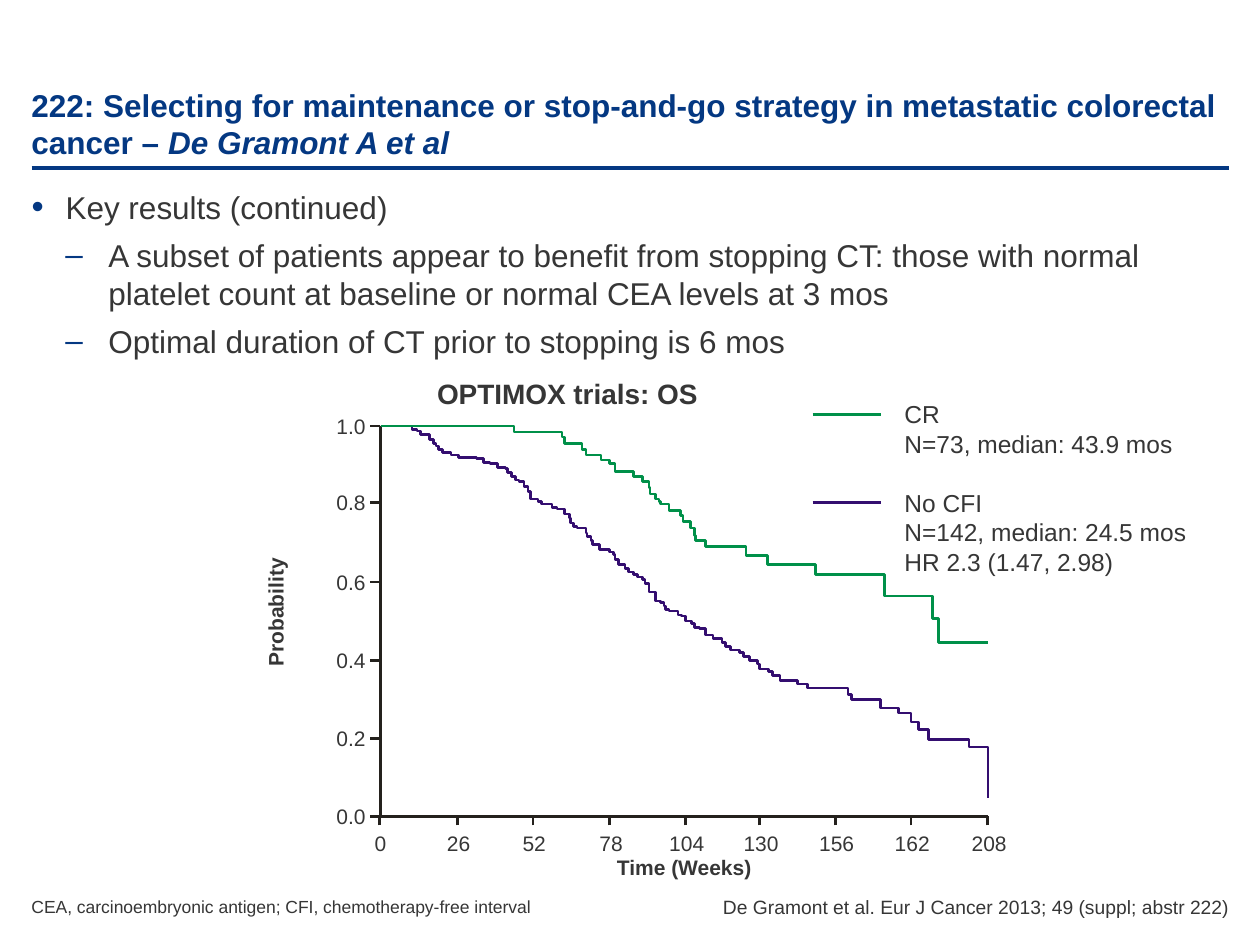
"""Build the maintenance versus stop-and-go survival slide."""
from lxml import etree
from pptx import Presentation
from pptx import util as u
from pptx.dml.color import RGBColor
from pptx.enum import shapes, text
from pptx.oxml import ns

SCALE = 9144
FONT = "Arial"
COLORS = {"navy": "043882", "text": "363636", "axis": "24211D",
          "no_cfi": "340E70", "cr": "009049"}
LEFT, CENTER, RIGHT = text.PP_ALIGN.LEFT, text.PP_ALIGN.CENTER, text.PP_ALIGN.RIGHT
TOP, BOTTOM = text.MSO_ANCHOR.TOP, text.MSO_ANCHOR.BOTTOM
ORIGIN_X, END_X, TOP_Y, BASE_Y = 302, 784, 338, 648
PROBABILITY_TICKS = {"1.0": 338, "0.8": 399, "0.6": 462,
                     "0.4": 524, "0.2": 586, "0.0": 648}
WEEK_TICKS = {"0": 301, "26": 363, "52": 423, "78": 484, "104": 544,
              "130": 603, "156": 663, "162": 723, "208": 784}
CR_DROPS = [
    (408, 343), (446, 347), (448, 352), (462, 357), (465, 361), (477, 365),
    (484, 368), (488, 374), (503, 378), (510, 382), (515, 387), (516, 392),
    (520, 396), (523, 398), (524, 400), (531, 405), (540, 409), (542, 414),
    (548, 419), (551, 425), (552, 429), (560, 434), (592, 441), (609, 448),
    (647, 456), (702, 473), (740, 491), (745, 510), (784, 510)]
NO_CFI_DROPS = [
    (327, 341), (331, 342), (334, 345), (341, 349), (344, 352), (346, 354),
    (348, 357), (351, 359), (358, 361), (364, 363), (378, 364), (384, 367),
    (389, 368), (395, 371), (401, 372), (403, 375), (406, 378), (409, 381),
    (412, 382), (416, 386), (419, 390), (421, 396), (427, 398), (430, 400),
    (438, 403), (442, 404), (448, 408), (452, 411), (453, 415), (455, 418),
    (458, 419), (465, 423), (466, 426), (469, 429), (470, 432), (476, 436),
    (484, 438), (487, 440), (488, 444), (491, 448), (496, 451), (499, 454),
    (503, 456), (506, 458), (510, 460), (512, 463), (515, 470), (520, 477),
    (524, 478), (527, 481), (528, 484), (531, 485), (538, 488), (541, 489),
    (544, 493), (549, 495), (551, 498), (555, 499), (560, 504), (566, 507),
    (573, 510), (576, 513), (580, 516), (587, 518), (590, 521), (595, 524),
    (601, 527), (603, 531), (610, 533), (613, 536), (619, 540), (633, 543),
    (641, 546), (673, 551), (676, 555), (699, 562), (713, 566), (723, 573),
    (729, 579), (737, 587), (769, 593), (784, 633)]


def px(value):
    return u.Emu(value * SCALE)


def add_run(paragraph, words, size, color="text", bold=False, italic=False):
    run = paragraph.add_run()
    run.text = words
    font = run.font
    font.name, font.size, font.bold, font.italic = FONT, u.Pt(size), bold, italic
    font.color.rgb = RGBColor.from_string(COLORS[color])


def add_frame(slide, box, insets=(10, 5, 10, 5), anchor=TOP, wrap=False):
    shape = slide.shapes.add_textbox(*map(px, box))
    frame = shape.text_frame
    frame.word_wrap, frame.vertical_anchor = wrap, anchor
    if not wrap:
        frame.auto_size = text.MSO_AUTO_SIZE.SHAPE_TO_FIT_TEXT
    (frame.margin_left, frame.margin_top,
     frame.margin_right, frame.margin_bottom) = map(px, insets)
    return shape


def add_label(slide, box, words, size=12, align=LEFT, bold=False, **frame_options):
    shape = add_frame(slide, box, **frame_options)
    paragraph = shape.text_frame.paragraphs[0]
    paragraph.alignment = align
    add_run(paragraph, words, size, bold=bold)
    return shape


def add_paragraphs(frame, count):
    return [frame.paragraphs[0]] + [frame.add_paragraph() for _ in range(count - 1)]


def set_bullet(paragraph, character, margin, hanging, percent):
    properties = paragraph._p.get_or_add_pPr()
    properties.set("marL", str(px(margin)))
    properties.set("indent", str(px(-hanging)))
    color = etree.SubElement(properties, ns.qn("a:buClr"))
    etree.SubElement(color, ns.qn("a:srgbClr"), val=COLORS["navy"])
    etree.SubElement(properties, ns.qn("a:buSzPct"), val=str(percent * 1000))
    etree.SubElement(properties, ns.qn("a:buFont"), typeface=FONT)
    etree.SubElement(properties, ns.qn("a:buChar"), char=character)


def add_line(slide, start, end, color, width=1.5):
    line = slide.shapes.add_connector(
        shapes.MSO_CONNECTOR.STRAIGHT, *map(px, start + end))
    line.line.color.rgb = RGBColor.from_string(COLORS[color])
    line.line.width = u.Pt(width)
    etree.SubElement(line._element.spPr, ns.qn("a:effectLst"))


def add_polyline(slide, points, color):
    builder = slide.shapes.build_freeform(*points[0], scale=SCALE)
    builder.add_line_segments(points[1:], close=False)
    shape = builder.convert_to_shape()
    shape.shadow.inherit = False
    shape.fill.background()
    shape.line.color.rgb = RGBColor.from_string(COLORS[color])
    shape.line.width = u.Pt(1.5)


def add_survival_curve(slide, drops, color):
    points = [(ORIGIN_X, TOP_Y)]
    for x, y in drops:
        points += [(x, points[-1][1]), (x, y)]
    add_polyline(slide, points, color)


def add_title(slide):
    add_line(slide, (25, 133), (975, 133), "navy", 2.25)
    shape = add_frame(slide, (25, 25, 950, 103), (0, 5, 0, 0), BOTTOM, wrap=True)
    paragraph = shape.text_frame.paragraphs[0]
    add_run(paragraph, "222: Selecting for maintenance or stop-and-go strategy in "
            "metastatic colorectal cancer – ", 18, "navy", bold=True)
    add_run(paragraph, "De Gramont A et al", 18, "navy", bold=True, italic=True)


def add_key_results(slide):
    items = [
        ("•", 27, 27, 110, "Key results (continued)"),
        ("–", 61, 34, 100, "A subset of patients appear to benefit from stopping CT: "
         "those with normal platelet count at baseline or normal CEA levels at 3 mos"),
        ("–", 61, 34, 100, "Optimal duration of CT prior to stopping is 6 mos")]
    frame = add_frame(slide, (25, 144, 958, 581), (0, 5, 0, 5), wrap=True).text_frame
    paragraphs = add_paragraphs(frame, len(items))
    for level, (paragraph, (*bullet, words)) in enumerate(zip(paragraphs, items)):
        paragraph.level = min(level, 1)
        paragraph.space_after = u.Pt(6)
        set_bullet(paragraph, *bullet)
        add_run(paragraph, words, 18)


def add_axes(slide):
    add_polyline(slide, [(ORIGIN_X, TOP_Y), (ORIGIN_X, BASE_Y), (END_X, BASE_Y)], "axis")
    for probability, y in PROBABILITY_TICKS.items():
        add_line(slide, (294, y), (ORIGIN_X, y), "axis")
        add_label(slide, (256, y - 15, 44, 30), probability, align=RIGHT)
    for week, x in WEEK_TICKS.items():
        width = 22 + 10 * len(week)
        add_line(slide, (x, 655), (x, BASE_Y), "axis")
        add_label(slide, (x + 1 - width // 2, 654, width, 30), week, align=CENTER)
    axis_title = add_label(slide, (165, 471, 107, 30), "Probability",
                           align=CENTER, bold=True)
    axis_title.rotation = 270
    add_label(slide, (479, 673, 128, 30), "Time (Weeks)", align=CENTER, bold=True)


def add_legend(slide):
    lines = ["CR", "N=73, median: 43.9 mos", "No CFI",
             "N=142, median: 24.5 mos", "HR 2.3 (1.47, 2.98)"]
    frame = add_frame(slide, (708, 312, 245, 151)).text_frame
    paragraphs = add_paragraphs(frame, len(lines))
    for paragraph, words in zip(paragraphs, lines):
        add_run(paragraph, words, 14)
    paragraphs[1].space_after = u.Pt(17)
    for y, color in ((329, "cr"), (399, "no_cfi")):
        add_line(slide, (645, y), (699, y), color)


def add_footers(slide):
    options = {"insets": (0, 0, 0, 0), "anchor": BOTTOM}
    add_label(slide, (25, 711, 407, 17), "CEA, carcinoembryonic antigen; "
              "CFI, chemotherapy-free interval", 10, **options)
    add_label(slide, (572, 710, 404, 19), "De Gramont et al. Eur J Cancer 2013; "
              "49 (suppl; abstr 222)", 11, RIGHT, **options)


def main():
    presentation = Presentation()
    presentation.slide_width, presentation.slide_height = px(1000), px(750)
    slide = presentation.slides.add_slide(presentation.slide_layouts[6])
    add_title(slide)
    add_key_results(slide)
    add_label(slide, (337, 294, 242, 39), "OPTIMOX trials: OS", 16, bold=True)
    add_axes(slide)
    add_survival_curve(slide, NO_CFI_DROPS, "no_cfi")
    add_survival_curve(slide, CR_DROPS, "cr")
    add_legend(slide)
    add_footers(slide)
    presentation.save("out.pptx")


if __name__ == "__main__":
    main()
